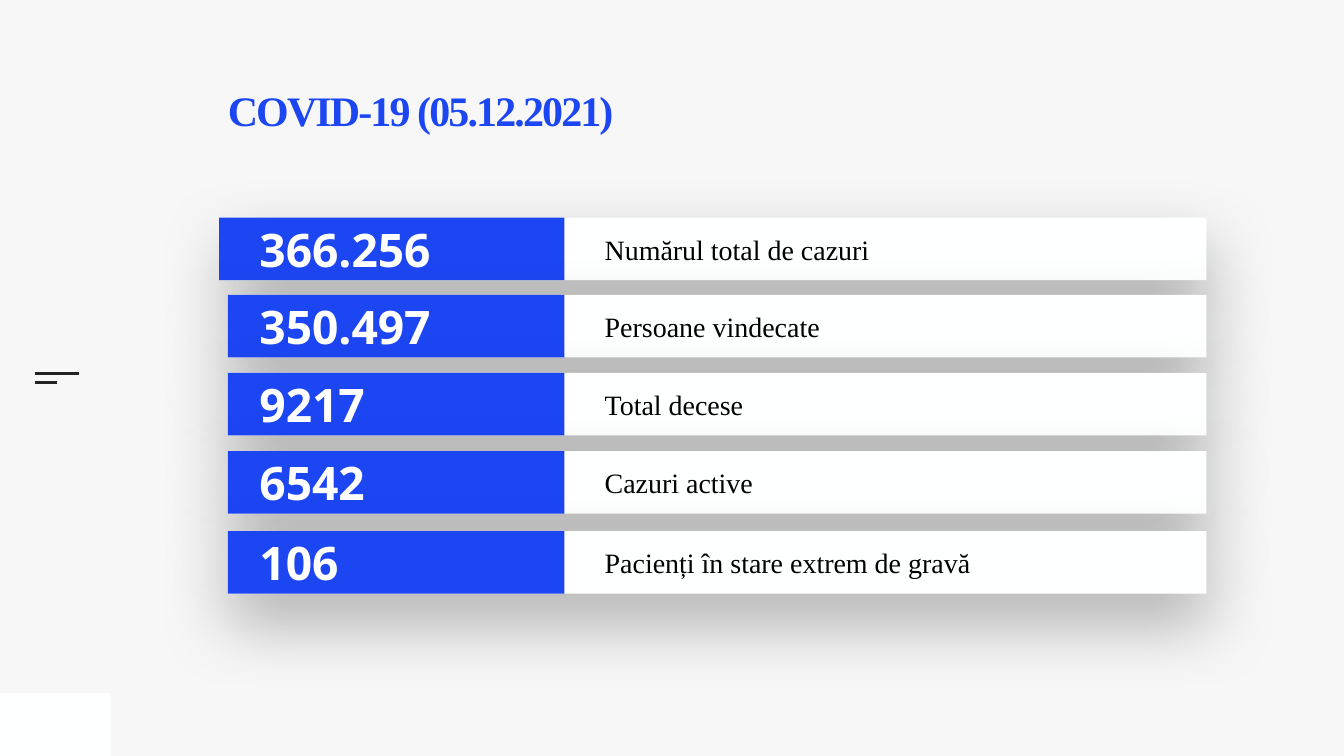
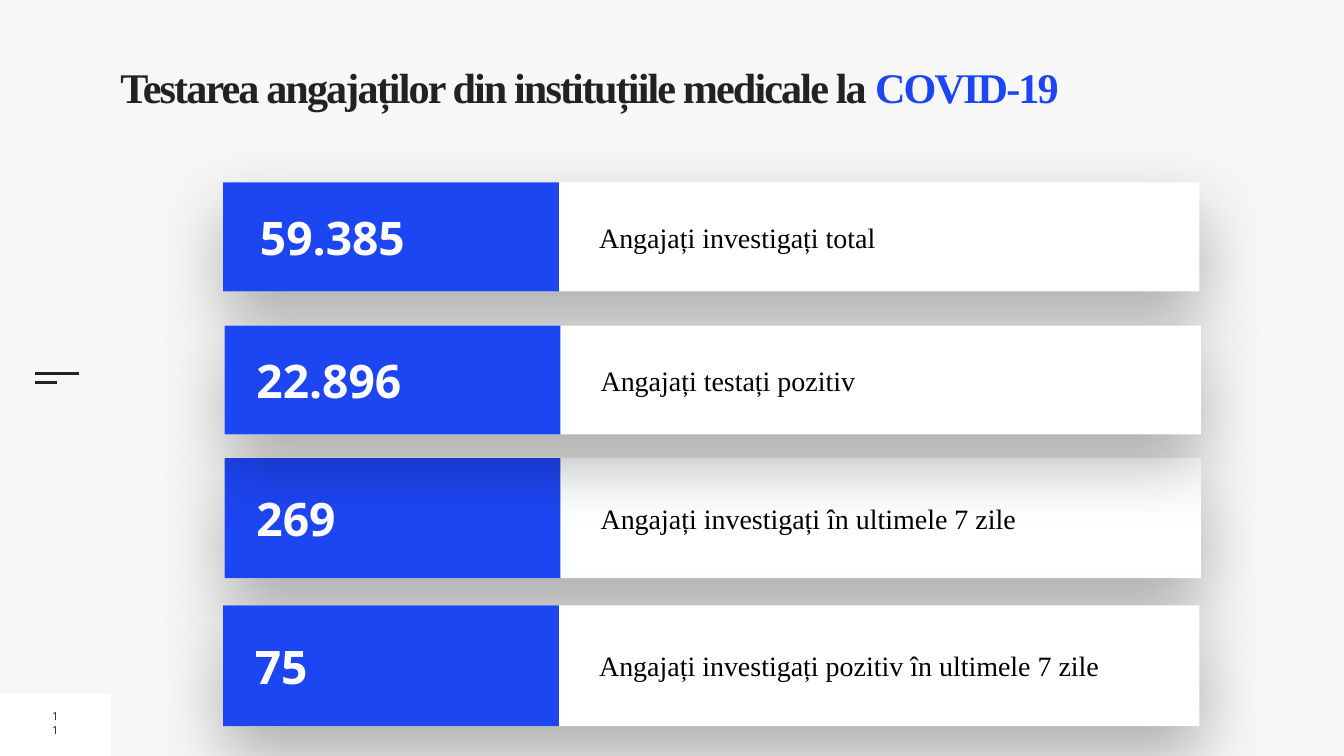
from lxml import etree
from pptx import Presentation
from pptx import util as u
from pptx.dml.color import RGBColor
from pptx.enum import shapes, text
from pptx.oxml import ns

# Shared look
PAPER, WHITE, INK, BLUE, BLACK = "F7F7F7", "FEFFFF", "222222", "1D46F3", "000000"
SERIF, SANS = "Times New Roman", "Open Sans"
WIDTH, HEIGHT = 26.67, 15
TEXT_INSET = 0.1

# Content: each card is (value, label, left, top, height), from back to front.
# band = card width, value panel width, value indent, label indent, label width
# label_share = label height as a share of the card height
SLIDES = [
    {
        "title": [("COVID-19 (05.12.2021)", BLUE)],
        "title_box": (4.52, 1.88, 13.01, 2.73),
        "title_size": 60,
        "number": None,
        "band": (19.42, 6.68, 0.53, 7.38, 11.79),
        "label_share": 0.71,
        "cards": [
            ("366.256", "Numărul total de cazuri", 4.52, 4.32, 1.24),
            ("350.497", "Persoane vindecate", 4.52, 5.85, 1.24),
            ("9217", "Total decese", 4.52, 7.4, 1.24),
            ("6542", "Cazuri active", 4.52, 8.95, 1.24),
            ("106", "Pacienți în stare extrem de gravă", 4.52, 10.54, 1.24),
        ],
        "panel_overhang": {"366.256": 0.17},
        "value_shift": {},
    },
    {
        "title": [("Testarea angajaților din instituțiile medicale la ", INK),
                  ("COVID-19", BLUE)],
        "title_box": (2.39, 1.42, 23, 1.58),
        "title_size": 60.3,
        "number": "11",
        "band": (19.37, 6.66, 0.53, 7.36, 11.76),
        "label_share": 0.35,
        "cards": [
            ("59.385", "Angajați investigați total", 4.43, 3.62, 2.16),
            ("269", "Angajați investigați în ultimele 7 zile", 4.46, 9.09, 2.38),
            ("75", "Angajați investigați pozitiv în ultimele 7 zile", 4.43, 12.01, 2.4),
            ("22.896", "Angajați testați pozitiv", 4.46, 6.46, 2.16),
        ],
        "panel_overhang": {},
        "value_shift": {"59.385": 0.1},
    },
]
VALUE_WIDTH, VALUE_HEIGHT = 6.05, 1.31


def rgb(color):
    return RGBColor.from_string(color)


def inches(*lengths):
    return [u.Inches(n) for n in lengths]


def add_rect(parent, box, color):
    sp = parent.shapes.add_shape(shapes.MSO_SHAPE.RECTANGLE, *inches(*box))
    sp.shadow.inherit = False
    sp.fill.solid()
    sp.fill.fore_color.rgb = rgb(color)
    sp.line.fill.background()
    return sp


def add_soft_shadow(sp):
    effects = sp._element.spPr.find(ns.qn("a:effectLst"))
    shadow = etree.SubElement(effects, ns.qn("a:outerShdw"), blurRad=str(u.Pt(100)),
                              dist=str(u.Pt(40)), dir="5400000", algn="t", rotWithShape="0")
    color = etree.SubElement(shadow, ns.qn("a:srgbClr"), val=BLACK)
    etree.SubElement(color, ns.qn("a:alpha"), val="30000")


def add_text(parent, box, runs, size, font, bold=False, inset=TEXT_INSET,
             anchor=text.MSO_ANCHOR.MIDDLE):
    """Write (words, colour) runs as one paragraph and return that paragraph."""
    tf = parent.shapes.add_textbox(*inches(*box)).text_frame
    tf.word_wrap = True
    tf.vertical_anchor = anchor
    tf.margin_left = tf.margin_top = tf.margin_right = tf.margin_bottom = u.Inches(inset)
    p = tf.paragraphs[0]
    for words, color in runs:
        r = p.add_run()
        r.text = words
        r.font.size, r.font.name, r.font.bold = u.Pt(size), font, bold
        r.font.color.rgb = rgb(color)
    return p


def add_frame(s, number):
    """Background, corner box with page number, and the two menu lines."""
    s.background.fill.solid()
    s.background.fill.fore_color.rgb = rgb(PAPER)
    add_rect(s, (0, HEIGHT - 1.24, 2.2, 1.24), WHITE)
    for y, length in ((7.41, 0.88), (7.59, 0.44)):
        line = s.shapes.add_connector(shapes.MSO_CONNECTOR.STRAIGHT,
                                      *inches(0.69, y, 0.69 + length, y))
        line.line.color.rgb = rgb(INK)
        line.line.width = u.Pt(3)
        etree.SubElement(line._element.spPr, ns.qn("a:effectLst"))
    if number:
        p = add_text(s, (0.93, 14.09, 0.34, 0.51), [(number, INK)], 16, SANS)
        p.alignment = text.PP_ALIGN.CENTER


def add_title(s, runs, box, size):
    p = add_text(s, box, runs, size, SERIF, bold=True, inset=0,
                 anchor=text.MSO_ANCHOR.TOP)
    p.line_spacing = 0.8
    for r in p.runs:
        r._r.get_or_add_rPr().set("spc", "-270")


def add_card(s, card, page):
    """White band with its label, and a blue panel with its value."""
    value, label, left, top, height = card
    width, panel, value_indent, label_indent, label_width = page["band"]
    overhang = page["panel_overhang"].get(value, 0)
    value_left = left + value_indent + page["value_shift"].get(value, 0)
    label_height = height * page["label_share"]
    middle = top + height / 2
    group = s.shapes.add_group_shape()
    add_soft_shadow(add_rect(group, (left, top, width, height), WHITE))
    add_text(group, (left + label_indent, middle - label_height / 2, label_width, label_height),
             [(label, BLACK)], 40, SERIF)
    add_rect(group, (left - overhang, top, panel + overhang, height), BLUE)
    add_text(group, (value_left, middle - VALUE_HEIGHT / 2, VALUE_WIDTH, VALUE_HEIGHT),
             [(value, "FFFFFF")], 66, SANS, bold=True)


def main():
    prs = Presentation()
    prs.slide_width, prs.slide_height = inches(WIDTH, HEIGHT)
    for page in SLIDES:
        s = prs.slides.add_slide(prs.slide_layouts[6])
        add_frame(s, page["number"])
        add_title(s, page["title"], page["title_box"], page["title_size"])
        for card in page["cards"]:
            add_card(s, card, page)
    prs.save("out.pptx")


if __name__ == "__main__":
    main()
